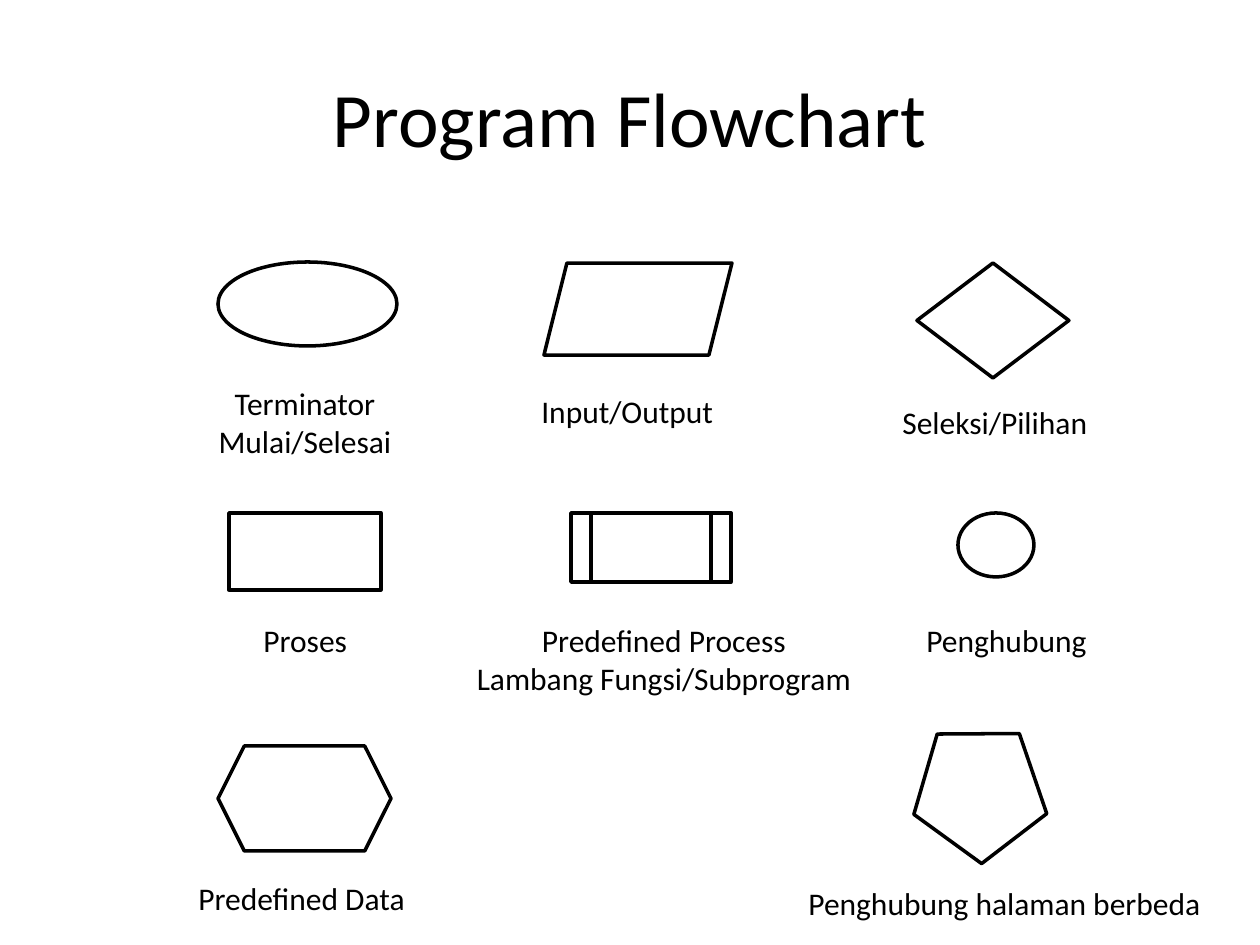
import pptx
import pptx.dml.color
import pptx.enum.shapes
import pptx.enum.text
import pptx.util

PX = 914400 // 126  # EMU per pixel
SHAPE = pptx.enum.shapes.MSO_SHAPE
ALIGN = pptx.enum.text.PP_ALIGN
ANCHOR = pptx.enum.text.MSO_ANCHOR
AUTO_SIZE = pptx.enum.text.MSO_AUTO_SIZE
THEME = {
    "font": "Calibri",
    "ink": pptx.dml.color.RGBColor(0, 0, 0),
    "paper": pptx.dml.color.RGBColor(255, 255, 255),
    "title": pptx.util.Pt(44),
    "label": pptx.util.Pt(18),
    "line": pptx.util.Pt(2),
}


def add_text(slide, box, lines, size, alignment):
    text_box = slide.shapes.add_textbox(*[value * PX for value in box])
    frame = text_box.text_frame
    for index, line in enumerate(lines):
        paragraph = frame.add_paragraph() if index else frame.paragraphs[0]
        paragraph.alignment = alignment
        run = paragraph.add_run()
        run.text = line
        run.font.name = THEME["font"]
        run.font.size = size
        run.font.color.rgb = THEME["ink"]
    return frame


presentation = pptx.Presentation()
presentation.slide_width = pptx.util.Inches(10)
presentation.slide_height = pptx.util.Inches(7.5)
slide = presentation.slides.add_slide(presentation.slide_layouts[6])

# Title
title = add_text(slide, (63, 38, 1134, 158), ["Program Flowchart"],
                 THEME["title"], ALIGN.CENTER)
title.word_wrap = True
title.vertical_anchor = ANCHOR.MIDDLE

# Flowchart symbols: preset, box, rotation, label box, label lines
symbols = [
    (SHAPE.OVAL, (218, 262, 179, 84), 0,
     (205, 378, 200, 89), ["Terminator", "Mulai/Selesai"]),
    (SHAPE.PARALLELOGRAM, (544, 263, 188, 92), 0,
     (529, 386, 199, 50), ["Input/Output"]),
    (SHAPE.DIAMOND, (917, 263, 152, 115), 0,
     (890, 397, 212, 50), ["Seleksi/Pilihan"]),
    (SHAPE.RECTANGLE, (229, 513, 152, 77), 0,
     (251, 615, 110, 50), ["Proses"]),
    (SHAPE.FLOWCHART_PREDEFINED_PROCESS, (571, 513, 160, 69), 0,
     (462, 615, 404, 89), ["Predefined Process", "Lambang Fungsi/Subprogram"]),
    (SHAPE.OVAL, (958, 513, 76, 64), 0,
     (914, 615, 188, 50), ["Penghubung"]),
    (SHAPE.HEXAGON, (218, 746, 173, 105), 0,
     (186, 873, 234, 50), ["Predefined Data"]),
    (SHAPE.REGULAR_PENTAGON, (905, 731, 137, 126), 251.1,
     (796, 878, 423, 50), ["Penghubung halaman berbeda"]),
]
for preset, box, rotation, label_box, lines in symbols:
    shape = slide.shapes.add_shape(preset, *[value * PX for value in box])
    shape.rotation = rotation
    shape.shadow.inherit = False
    shape.fill.solid()
    shape.fill.fore_color.rgb = THEME["paper"]
    shape.line.color.rgb = THEME["ink"]
    shape.line.width = THEME["line"]

    # Two-line labels are centred, single lines start at the left
    alignment = ALIGN.CENTER if len(lines) > 1 else ALIGN.LEFT
    label = add_text(slide, label_box, lines, THEME["label"], alignment)
    label.word_wrap = False
    label.auto_size = AUTO_SIZE.SHAPE_TO_FIT_TEXT

presentation.save("out.pptx")
